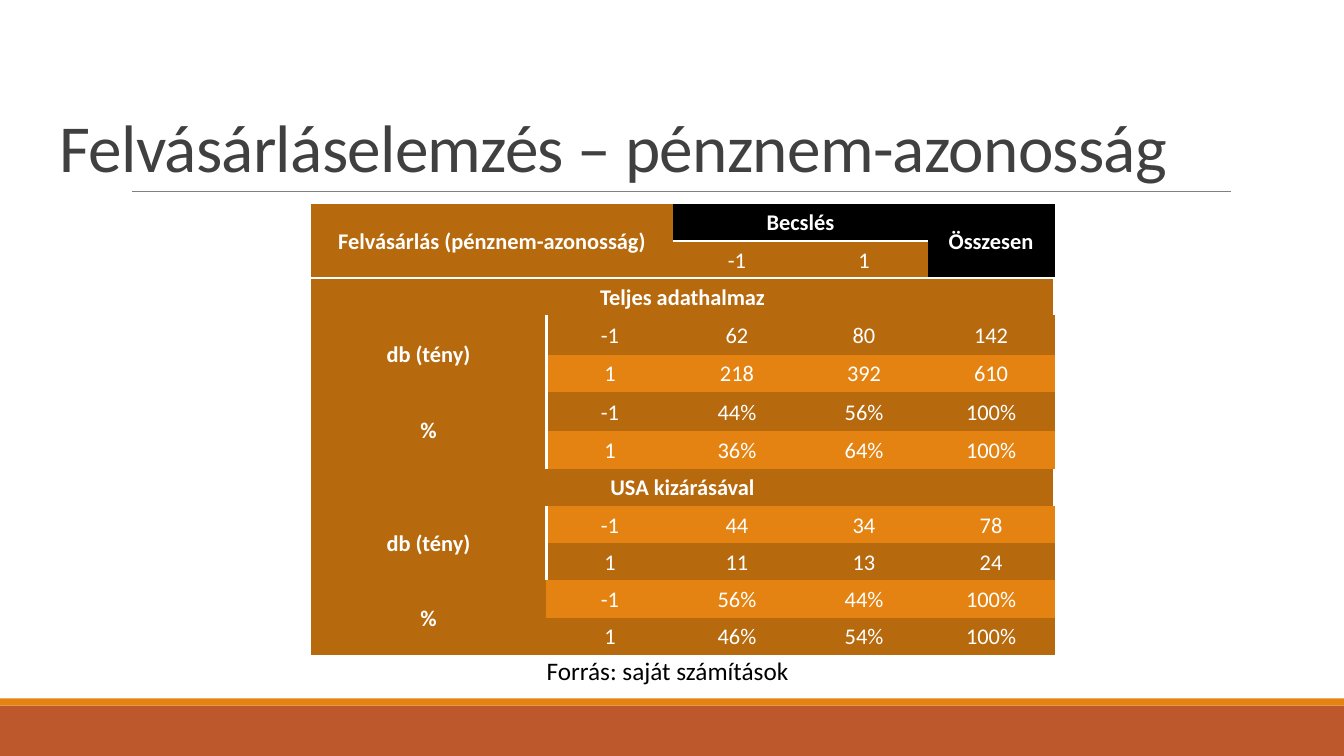
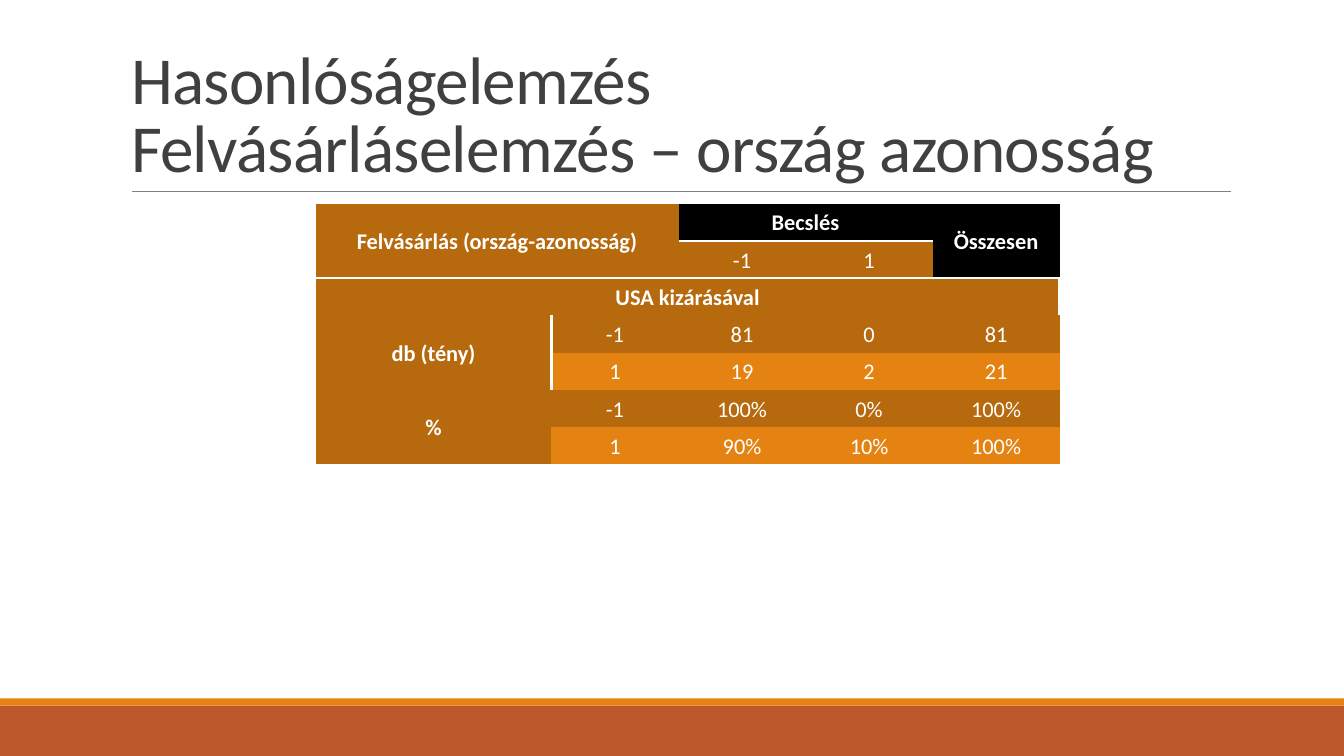
import lxml.etree
import pptx
import pptx.dml.color
import pptx.enum.shapes
import pptx.enum.text
import pptx.oxml.ns
import pptx.util

Inches = pptx.util.Inches
ALIGN = pptx.enum.text.PP_ALIGN
ANCHOR = pptx.enum.text.MSO_ANCHOR
COLORS = {
    "band": "BD582C",
    "accent": "E48312",
    "dark": "B7690E",
    "rule": "808080",
    "title": "404040",
    "black": "000000",
    "white": "FFFFFF",
}
FONT = "Calibri"
PLAIN_TABLE = "{2D5ABB26-0587-4C30-8999-92F81FD0307C}"
COLUMN_WIDTHS = (2.34, 1.26, 1.26, 1.26, 1.26)
ROW_HEIGHT = 0.37
HEADER_ROWS = 2
PAGE_WIDTH = 13.33


def rgb(name):
    """Return the named colour."""
    return pptx.dml.color.RGBColor.from_string(COLORS[name])


def write_text(frame, text, size=16, color="white", bold=False, align=ALIGN.CENTER,
               line_spacing=None, tracking=None):
    """Write one formatted paragraph into a text frame."""
    para = frame.paragraphs[0]
    para.text = text
    para.alignment = align
    para.line_spacing = line_spacing
    for span in para.runs:
        span.font.name = FONT
        span.font.size = pptx.util.Pt(size)
        span.font.bold = bold
        span.font.color.rgb = rgb(color)
        if tracking is not None:
            span.font._element.set("spc", str(round(tracking * 100)))


def add_band(page, top, height, color):
    """Draw a full-width band."""
    band = page.shapes.add_shape(pptx.enum.shapes.MSO_SHAPE.RECTANGLE, 0, Inches(top),
                                 Inches(PAGE_WIDTH), Inches(height))
    band.shadow.inherit = False
    band.fill.solid()
    band.fill.fore_color.rgb = rgb(color)
    band.line.fill.background()
    return band


def add_rule(page, left, right, top):
    """Draw the thin rule under the title."""
    rule = page.shapes.add_connector(pptx.enum.shapes.MSO_CONNECTOR.STRAIGHT, Inches(left),
                                     Inches(top), Inches(right), Inches(top))
    rule.line.color.rgb = rgb("rule")
    rule.line.width = pptx.util.Pt(0.5)
    lxml.etree.SubElement(rule.element.spPr, pptx.oxml.ns.qn("a:effectLst"))
    return rule


def decorate_layout(layout, page):
    """Build the shared bands and rule and move them to the layout."""
    parts = (add_band(page, 7, 0.5, "band"), add_band(page, 6.93, 0.07, "accent"),
             add_rule(page, 1.31, 12.21, 1.9))
    for part in parts:
        layout.shapes.element.append(part.element)


def place_title(page, text, left, width):
    """Place and format the title placeholder."""
    title = page.shapes.title
    title.left, title.top = Inches(left), Inches(0.31)
    title.width, title.height = Inches(width), Inches(1.59)
    frame = title.text_frame
    frame.auto_size = pptx.enum.text.MSO_AUTO_SIZE.NONE
    frame.vertical_anchor = ANCHOR.BOTTOM
    write_text(frame, text, size=48, color="title", align=ALIGN.LEFT,
               line_spacing=0.85, tracking=-0.5)


def add_border(cell, edge):
    """Add a white border to one edge of a cell."""
    properties = cell._tc.get_or_add_tcPr()
    line = lxml.etree.Element(pptx.oxml.ns.qn("a:" + edge), w=str(pptx.util.Pt(2)))
    fill = lxml.etree.SubElement(line, pptx.oxml.ns.qn("a:solidFill"))
    lxml.etree.SubElement(fill, pptx.oxml.ns.qn("a:srgbClr"), val=COLORS["white"])
    properties.insert(0, line)


def fill_cell(table, row, column, text, rows=1, columns=1, fill="dark", bold=False, edge=None):
    """Fill a cell, merged over the given rows and columns."""
    cell = table.cell(row, column)
    if rows * columns > 1:
        cell.merge(table.cell(row + rows - 1, column + columns - 1))
    for row_index in range(row, row + rows):
        for column_index in range(column, column + columns):
            part = table.cell(row_index, column_index)
            part.fill.solid()
            part.fill.fore_color.rgb = rgb(fill)
            if edge:
                add_border(part, edge)
    cell.vertical_anchor = ANCHOR.MIDDLE
    cell.margin_left = cell.margin_right = Inches(0.05)
    cell.margin_top = cell.margin_bottom = 0
    write_text(cell.text_frame, text, bold=bold, line_spacing=1.07)


def fill_header(table, label):
    """Fill the two header rows."""
    fill_cell(table, 0, 0, label, rows=2, columns=2, bold=True, edge="lnB")
    fill_cell(table, 0, 2, "Becslés", columns=2, fill="black", bold=True, edge="lnB")
    fill_cell(table, 0, 4, "Összesen", rows=2, fill="black", bold=True, edge="lnB")
    for column, text in ((2, "-1"), (3, "1")):
        fill_cell(table, 1, column, text, edge="lnB")


def fill_section(table, top, heading, values):
    """Fill a heading row and its count and percentage rows."""
    fill_cell(table, top, 0, heading, columns=5, bold=True, edge="lnR")
    for index, label in enumerate(("db (tény)", "%")):
        row = top + 1 + 2 * index
        is_last = row + 2 == len(table.rows)
        fill_cell(table, row, 0, label, rows=2, bold=True, edge=None if is_last else "lnR")
    for index, numbers in enumerate(values):
        row = top + 1 + index
        sign = "1" if index % 2 else "-1"
        for column, text in enumerate((sign, *numbers), start=1):
            fill_cell(table, row, column, text, fill="dark" if row % 2 else "accent")


def add_result_table(page, left, top, label, sections, tall_rows=()):
    """Add the classification table at the given corner."""
    row_count = HEADER_ROWS + sum(1 + len(values) for heading, values in sections)
    frame = page.shapes.add_table(row_count, len(COLUMN_WIDTHS), Inches(left), Inches(top),
                                  Inches(sum(COLUMN_WIDTHS)), Inches(row_count * ROW_HEIGHT))
    next(frame.element.iter(pptx.oxml.ns.qn("a:tableStyleId"))).text = PLAIN_TABLE
    table = frame.table
    table.first_row = table.horz_banding = False
    for column, width in zip(table.columns, COLUMN_WIDTHS):
        column.width = Inches(width)
    for index, row in enumerate(table.rows):
        row.height = Inches(0.39 if index in tall_rows else ROW_HEIGHT)
    fill_header(table, label)
    section_top = HEADER_ROWS
    for heading, values in sections:
        fill_section(table, section_top, heading, values)
        section_top += 1 + len(values)


def add_caption(page, text, left, top, width, height):
    """Add a centred source line."""
    box = page.shapes.add_textbox(Inches(left), Inches(top), Inches(width), Inches(height))
    box.text_frame.word_wrap = True
    write_text(box.text_frame, text, size=18, color="black")


def build_currency_page(page):
    """Build the currency identity slide."""
    place_title(page, "Felvásárláselemzés – pénznem-azonosság", 0.49, 12.17)
    sections = (
        ("Teljes adathalmaz", (("62", "80", "142"), ("218", "392", "610"),
                               ("44%", "56%", "100%"), ("36%", "64%", "100%"))),
        ("USA kizárásával", (("44", "34", "78"), ("11", "13", "24"),
                             ("56%", "44%", "100%"), ("46%", "54%", "100%"))),
    )
    add_result_table(page, 3.08, 2.02, "Felvásárlás (pénznem-azonosság)", sections, (3, 5))
    add_caption(page, "Forrás: saját számítások", 0.26, 6.45, 12.72, 0.4)


def build_country_page(page):
    """Build the country identity slide."""
    place_title(page, "Hasonlóságelemzés\nFelvásárláselemzés – ország azonosság", 1.2, 11)
    sections = (
        ("USA kizárásával", (("81", "0", "81"), ("19", "2", "21"),
                             ("100%", "0%", "100%"), ("90%", "10%", "100%"))),
    )
    add_result_table(page, 3.13, 2.02, "Felvásárlás (ország-azonosság)", sections)


def main():
    """Build and save the deck."""
    deck = pptx.Presentation()
    deck.slide_width, deck.slide_height = Inches(PAGE_WIDTH), Inches(7.5)
    layout = deck.slide_layouts.get_by_name("Title Only")
    pages = [deck.slides.add_slide(layout) for builder in range(2)]
    decorate_layout(layout, pages[0])
    build_currency_page(pages[0])
    build_country_page(pages[1])
    deck.save("out.pptx")


if __name__ == "__main__":
    main()
